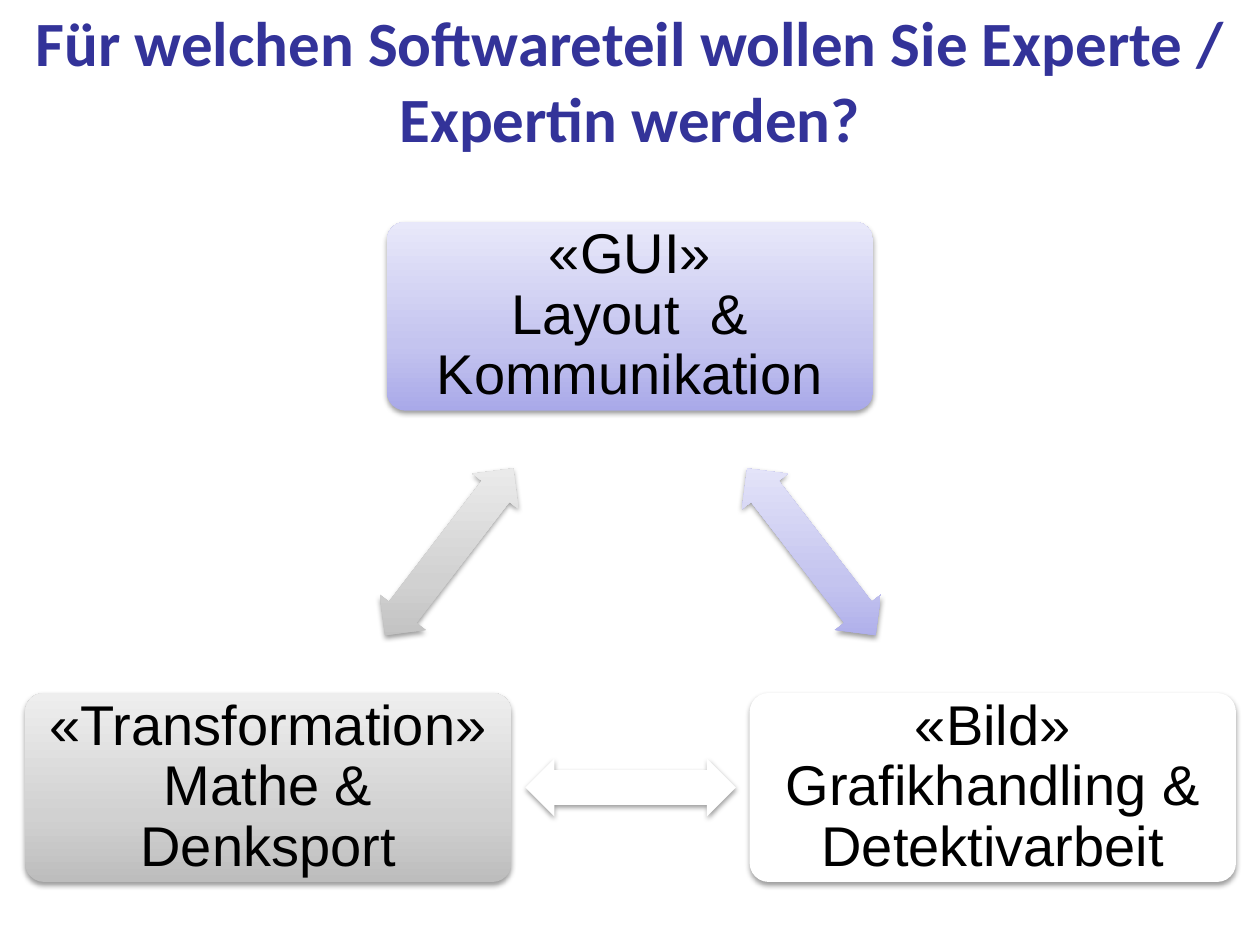
from collections import namedtuple
from dataclasses import dataclass
from math import atan2, degrees

from pptx import Presentation
from pptx.dml.color import RGBColor
from pptx.enum.shapes import MSO_SHAPE
from pptx.enum.text import MSO_ANCHOR, PP_ALIGN
from pptx.oxml import parse_xml
from pptx.oxml.ns import nsdecls, qn
from pptx.util import Inches, Pt

Box = namedtuple("Box", "left top width height")


@dataclass(frozen=True)
class Theme:
    title_format = {"name": "Calibri", "size": Pt(36), "bold": True}
    card_format = {"name": "Arial", "size": Pt(32)}
    title_color = "333399"
    card_color = "000000"
    # Colours from bottom to top; a single colour is a plain fill
    lilac = ("A9A9E9", "C4C4EF", "E8E8FA")
    white = ("FFFFFF",)
    grey = ("BDBDBD", "D1D1D1", "EEEEEE")
    stops = (0, 35, 100)


THEME = Theme()
CARD_WIDTH, CARD_HEIGHT = 3.86, 1.5
ARROW_WIDTH, ARROW_HEIGHT = 1.67, 0.46

# Centre, fill and wording of each card, clockwise from the top
CARDS = [
    ((5, 2.51), THEME.lilac, "«GUI»\vLayout  &\vKommunikation"),
    ((7.88, 6.25), THEME.white, "«Bild»\vGrafikhandling &\vDetektivarbeit"),
    ((2.13, 6.25), THEME.grey, "«Transformation»\vMathe & Denksport"),
]


def centred_box(center, width, height):
    return Box(center[0] - width / 2, center[1] - height / 2, width, height)


def write_text(frame, text, font_format, color, inset):
    frame.word_wrap = True
    frame.vertical_anchor = MSO_ANCHOR.MIDDLE
    for side in ("left", "top", "right", "bottom"):
        setattr(frame, f"margin_{side}", Inches(inset))
    para = frame.paragraphs[0]
    para.text = text
    para.alignment = PP_ALIGN.CENTER
    for span in para.runs:
        for name, value in font_format.items():
            setattr(span.font, name, value)
        span.font.color.rgb = RGBColor.from_string(color)
    return para


def paint(shape, colors):
    """Fill the shape, remove its outline and give it a soft shadow."""
    properties = shape.element.spPr
    if len(colors) == 1:
        shape.fill.solid()
        shape.fill.fore_color.rgb = RGBColor.from_string(colors[0])
    else:
        shape.fill.gradient()
        stops = "".join(
            f'<a:gs pos="{stop * 1000}"><a:srgbClr val="{color}"/></a:gs>'
            for stop, color in zip(THEME.stops, colors))
        gradient = parse_xml(
            f'<a:gradFill {nsdecls("a")} rotWithShape="0"><a:gsLst>{stops}</a:gsLst>'
            '<a:lin ang="16200000" scaled="0"/></a:gradFill>')
        properties.replace(properties.find(qn("a:gradFill")), gradient)
    shape.line.fill.background()
    shape.shadow.inherit = False
    properties.find(qn("a:effectLst")).append(parse_xml(
        f'<a:outerShdw {nsdecls("a")} blurRad="{Pt(3.1)}" dist="{Pt(1.6)}" '
        'dir="5400000" rotWithShape="0"><a:srgbClr val="000000">'
        '<a:alpha val="38000"/></a:srgbClr></a:outerShdw>'))


def add_painted_shape(page, kind, box, adjustments, colors):
    shape = page.shapes.add_shape(kind, *map(Inches, box))
    for index, value in enumerate(adjustments):
        shape.adjustments[index] = value
    paint(shape, colors)
    return shape


def add_title(page, box, text):
    title = page.shapes.add_textbox(*map(Inches, box))
    write_text(title.text_frame, text, THEME.title_format, THEME.title_color, 0.05)


def add_card(page, box, colors, text):
    card = add_painted_shape(page, MSO_SHAPE.ROUNDED_RECTANGLE, box, [0.1], colors)
    para = write_text(card.text_frame, text, THEME.card_format, THEME.card_color, 0.13)
    para.line_spacing = 0.9


def add_arrow(page, start, end, colors):
    """Place a double arrow halfway between two card centres."""
    middle = [(first + second) / 2 for first, second in zip(start, end)]
    box = centred_box(middle, ARROW_WIDTH, ARROW_HEIGHT)
    arrow = add_painted_shape(page, MSO_SHAPE.LEFT_RIGHT_ARROW, box, [0.6, 0.5], colors)
    arrow.rotation = degrees(atan2(end[1] - start[1], end[0] - start[0])) % 360


def add_cycle(page, cards):
    next_cards = cards[1:] + cards[:1]
    for (center, colors, text), (next_center, *_) in zip(cards, next_cards):
        add_card(page, centred_box(center, CARD_WIDTH, CARD_HEIGHT), colors, text)
        add_arrow(page, center, next_center, colors)


def main():
    deck = Presentation()
    deck.slide_width, deck.slide_height = Inches(10), Inches(7.5)
    page = deck.slides.add_slide(deck.slide_layouts[6])

    # Heading
    add_title(page, Box(0.12, 0, 9.76, 1.26),
              "Für welchen Softwareteil wollen Sie Experte / Expertin werden?")
    # Three software parts, joined in a cycle
    add_cycle(page, CARDS)

    deck.save("out.pptx")


if __name__ == "__main__":
    main()
